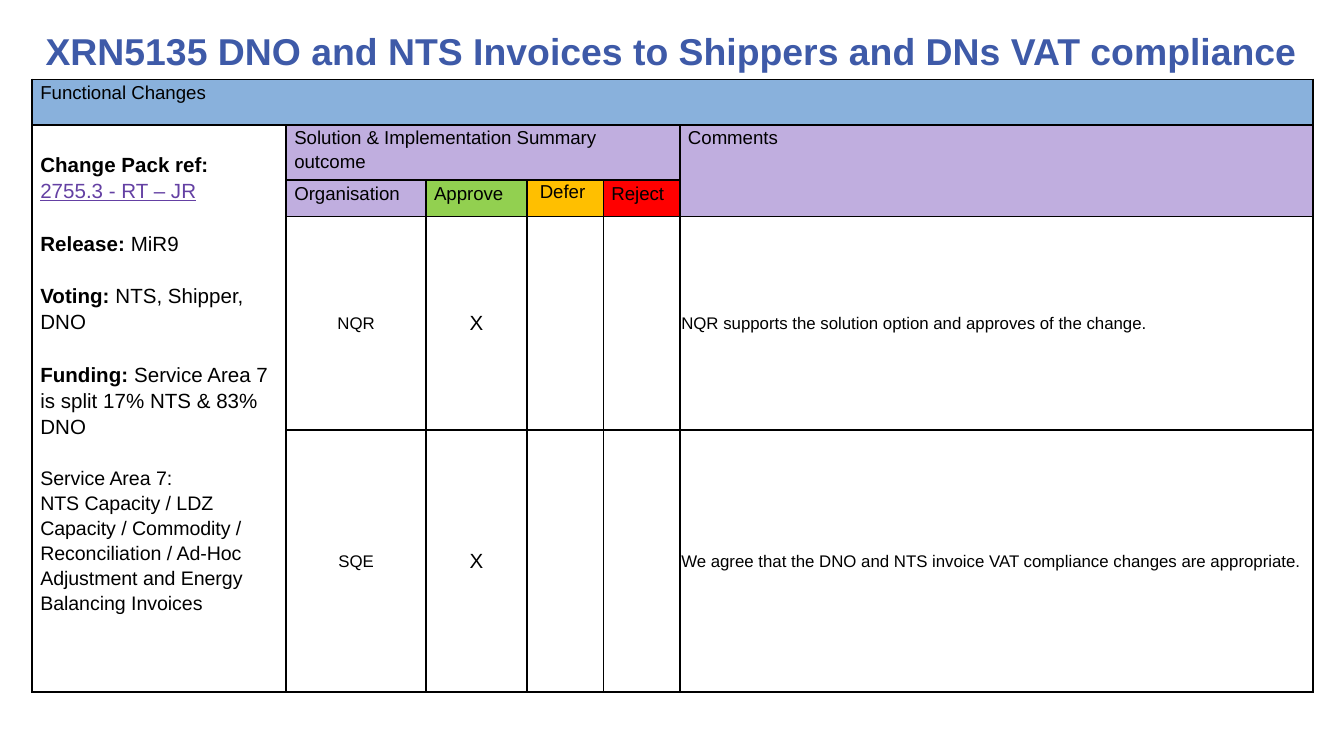
from dataclasses import dataclass

from lxml.etree import SubElement
from pptx import Presentation
from pptx.dml.color import RGBColor
from pptx.enum.text import MSO_ANCHOR as Anchor, PP_ALIGN as Align
from pptx.oxml.ns import qn
from pptx.util import Inches, Pt


@dataclass(frozen=True)
class Theme:
    font: str = "Arial"
    title: str = "3E5AA8"
    ink: str = "000000"
    reference: str = "6440A3"
    banner: str = "89B1DC"
    header: str = "C0AEDF"
    approve: str = "92D050"
    defer: str = "FFBF00"
    reject: str = "FF0000"
    title_size: float = 20
    detail_size: float = 11
    area_size: float = 10.5
    header_size: float = 10
    comment_size: float = 9
    spacing: float = 1.15
    border: float = 1


THEME = Theme()
COLUMNS = [1.89, 1.04, 0.75, 0.57, 0.57, 4.71]
ROWS = [0.34, 0.41, 0.27, 1.59, 1.95]
WIDE = (0.06, 0, 0.06, 0)
TIGHT = (0.01, 0.01, 0.01, 0)
RESPONSES = [
    ("NQR", "X", "NQR supports the solution option and approves of the change."),
    ("SQE", "X", "We agree that the DNO and NTS invoice VAT compliance changes are appropriate."),
]
DETAILS = [
    ("Release: ", "MiR9"),
    ("Voting: ", "NTS, Shipper, DNO"),
    ("Funding: ", "Service Area 7 is split 17% NTS & 83% DNO"),
]
SERVICE_AREA = [
    "Service Area 7:",
    "NTS Capacity / LDZ Capacity / Commodity / Reconciliation / Ad-Hoc Adjustment and Energy Balancing Invoices",
]


def add_run(paragraph, text, *, size, color=THEME.ink, bold=False, underline=False):
    run = paragraph.add_run()
    run.text = text
    font = run.font
    font.name = THEME.font
    font.size = Pt(size)
    font.bold = bold
    font.underline = underline
    font.color.rgb = RGBColor.from_string(color)


def add_paragraph(frame, *, first=False, before=0):
    paragraph = frame.paragraphs[0] if first else frame.add_paragraph()
    paragraph.line_spacing = THEME.spacing
    if before:
        paragraph.space_before = Pt(before)
    return paragraph


def set_borders(cell):
    properties = cell._tc.get_or_add_tcPr()
    for side in ("a:lnL", "a:lnR", "a:lnT", "a:lnB"):
        line = SubElement(properties, qn(side), w=str(Pt(THEME.border)))
        fill = SubElement(line, qn("a:solidFill"))
        SubElement(fill, qn("a:srgbClr"), val=THEME.ink)


def set_margins(cell, margins):
    cell.margin_left, cell.margin_top, cell.margin_right, cell.margin_bottom = map(Inches, margins)


def fill_header(cell, text, color, *, centered=False):
    cell.fill.solid()
    cell.fill.fore_color.rgb = RGBColor.from_string(color)
    set_margins(cell, TIGHT if centered else WIDE)
    paragraph = cell.text_frame.paragraphs[0]
    if centered:
        paragraph.alignment = Align.CENTER
    else:
        paragraph.line_spacing = THEME.spacing
    add_run(paragraph, text, size=THEME.header_size)


def fill_response(cell, text, *, size, align):
    set_margins(cell, TIGHT)
    cell.vertical_anchor = Anchor.MIDDLE
    paragraph = cell.text_frame.paragraphs[0]
    paragraph.alignment = align
    add_run(paragraph, text, size=size)


def fill_details(cell):
    set_margins(cell, (0.06, 0.19, 0.06, 0))
    frame = cell.text_frame
    size = THEME.detail_size
    add_run(add_paragraph(frame, first=True), "Change Pack ref: ", size=size, bold=True)
    add_run(add_paragraph(frame), "2755.3 - RT – JR", size=size, color=THEME.reference, underline=True)
    for label, value in DETAILS:
        paragraph = add_paragraph(frame, before=14)
        add_run(paragraph, label, size=size, bold=True)
        add_run(paragraph, value, size=size)
    for text, before in zip(SERVICE_AREA, (14, 0)):
        add_run(add_paragraph(frame, before=before), text, size=THEME.area_size)


def add_title(slide, text):
    box = slide.shapes.add_textbox(Inches(0.24), Inches(0.16), Inches(9.71), Inches(0.44))
    box.text_frame.word_wrap = True
    add_run(box.text_frame.paragraphs[0], text, size=THEME.title_size, color=THEME.title, bold=True)


def add_grid(slide):
    frame = slide.shapes.add_table(
        len(ROWS), len(COLUMNS), Inches(0.24), Inches(0.59), Inches(sum(COLUMNS)), Inches(sum(ROWS))
    )
    table = frame.table
    table.first_row = False
    table.horz_banding = False
    for column, width in zip(table.columns, COLUMNS):
        column.width = Inches(width)
    for row, height in zip(table.rows, ROWS):
        row.height = Inches(height)
    for cell in table.iter_cells():
        set_borders(cell)
        cell.fill.background()
    for start, end in [((0, 0), (0, 5)), ((1, 0), (4, 0)), ((1, 1), (1, 4)), ((1, 5), (2, 5))]:
        table.cell(*start).merge(table.cell(*end))
    return table


def main():
    presentation = Presentation()
    presentation.slide_width = Inches(10)
    presentation.slide_height = Inches(10) * 9 // 16
    slide = presentation.slides.add_slide(presentation.slide_layouts[6])

    add_title(slide, "XRN5135 DNO and NTS Invoices to Shippers and DNs VAT compliance")
    table = add_grid(slide)
    fill_header(table.cell(0, 0), "Functional Changes", THEME.banner)
    fill_header(table.cell(1, 1), "Solution & Implementation Summary outcome", THEME.header)
    fill_header(table.cell(1, 5), "Comments", THEME.header)
    fill_header(table.cell(2, 1), "Organisation", THEME.header)
    fill_header(table.cell(2, 2), "Approve", THEME.approve)
    fill_header(table.cell(2, 3), "Defer ", THEME.defer, centered=True)
    fill_header(table.cell(2, 4), "Reject", THEME.reject)
    fill_details(table.cell(1, 0))
    for row, (organisation, vote, comment) in enumerate(RESPONSES, start=3):
        fill_response(table.cell(row, 1), organisation, size=THEME.comment_size, align=Align.CENTER)
        fill_response(table.cell(row, 2), vote, size=THEME.detail_size, align=Align.CENTER)
        fill_response(table.cell(row, 5), comment, size=THEME.comment_size, align=Align.LEFT)

    presentation.save("out.pptx")


if __name__ == "__main__":
    main()
